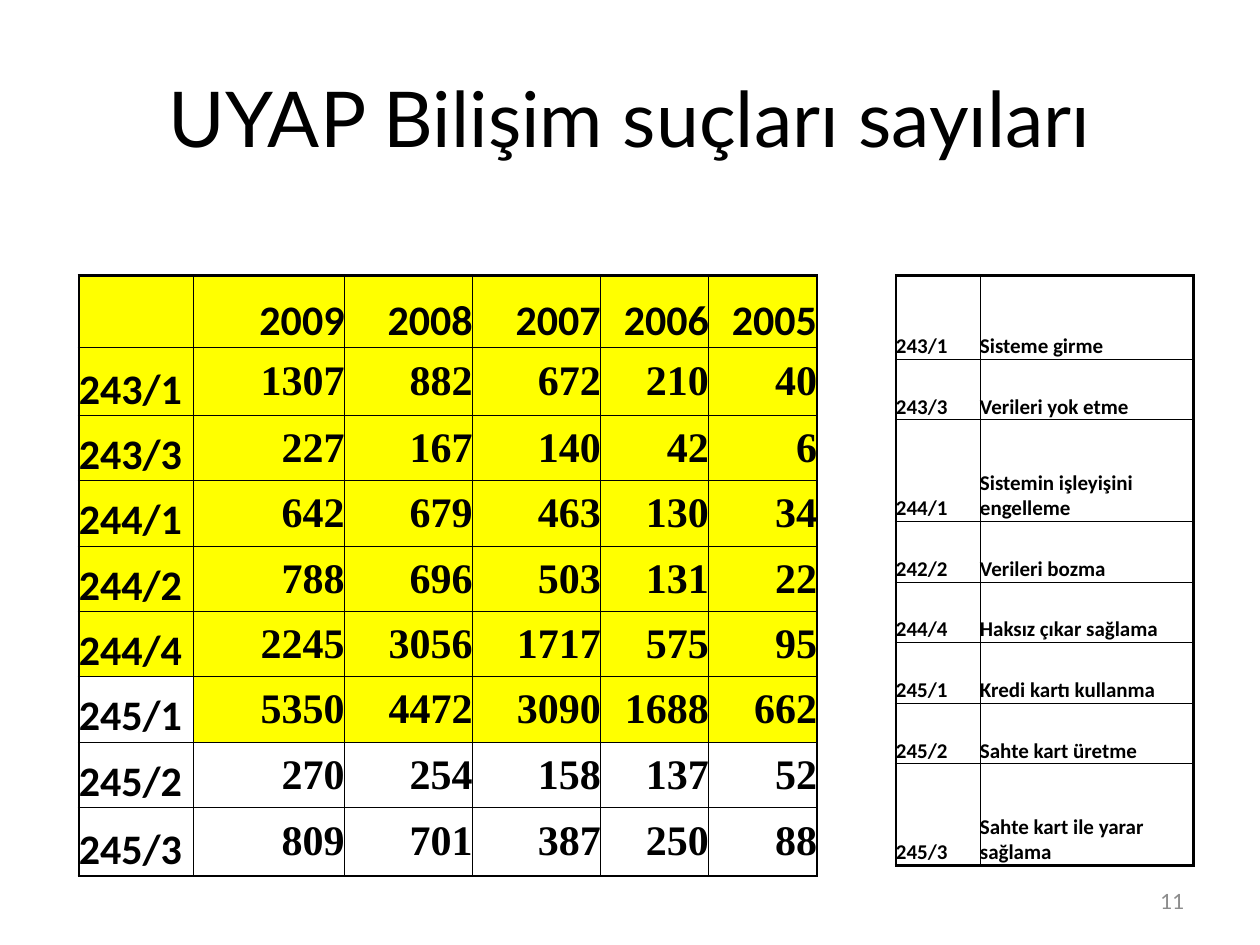
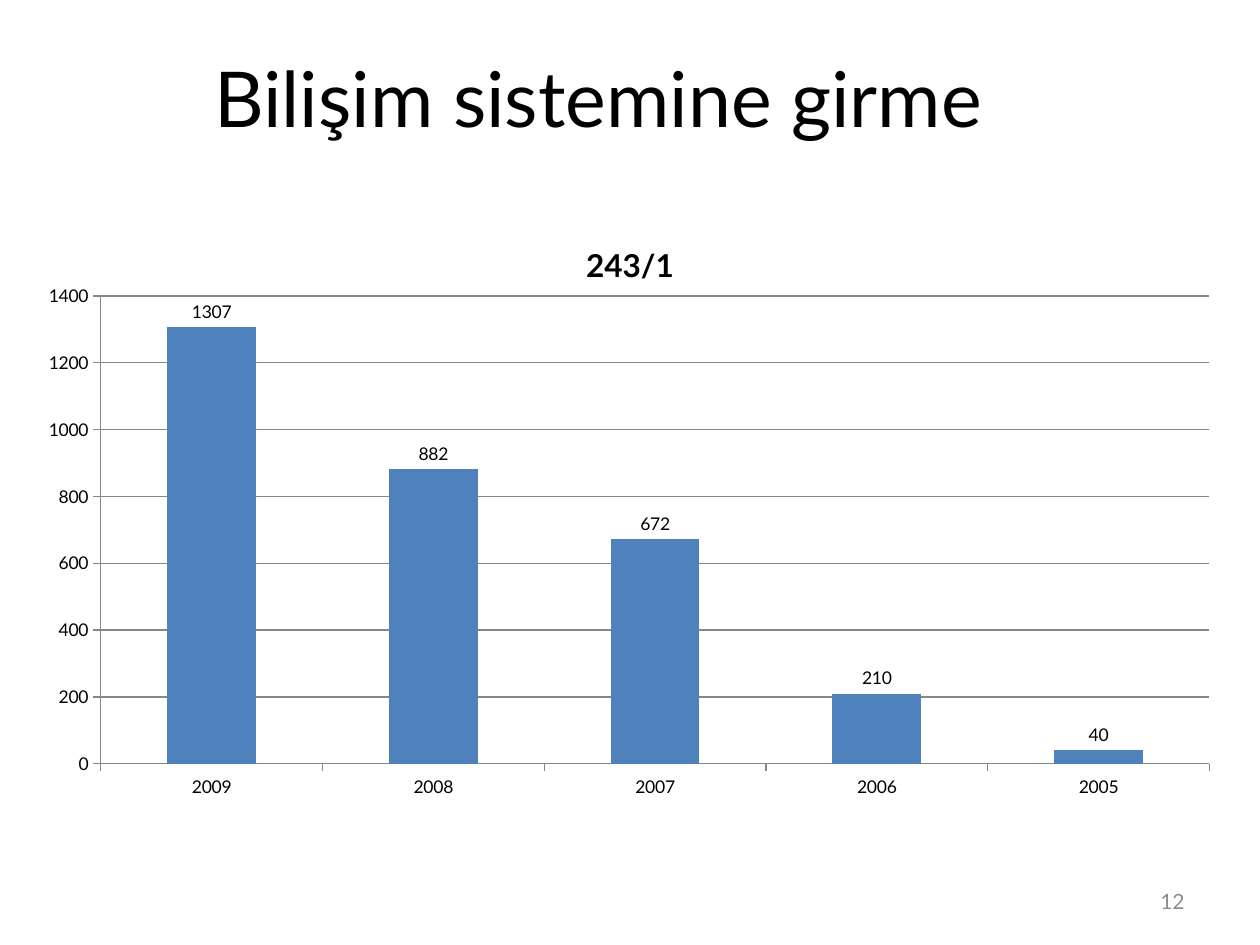
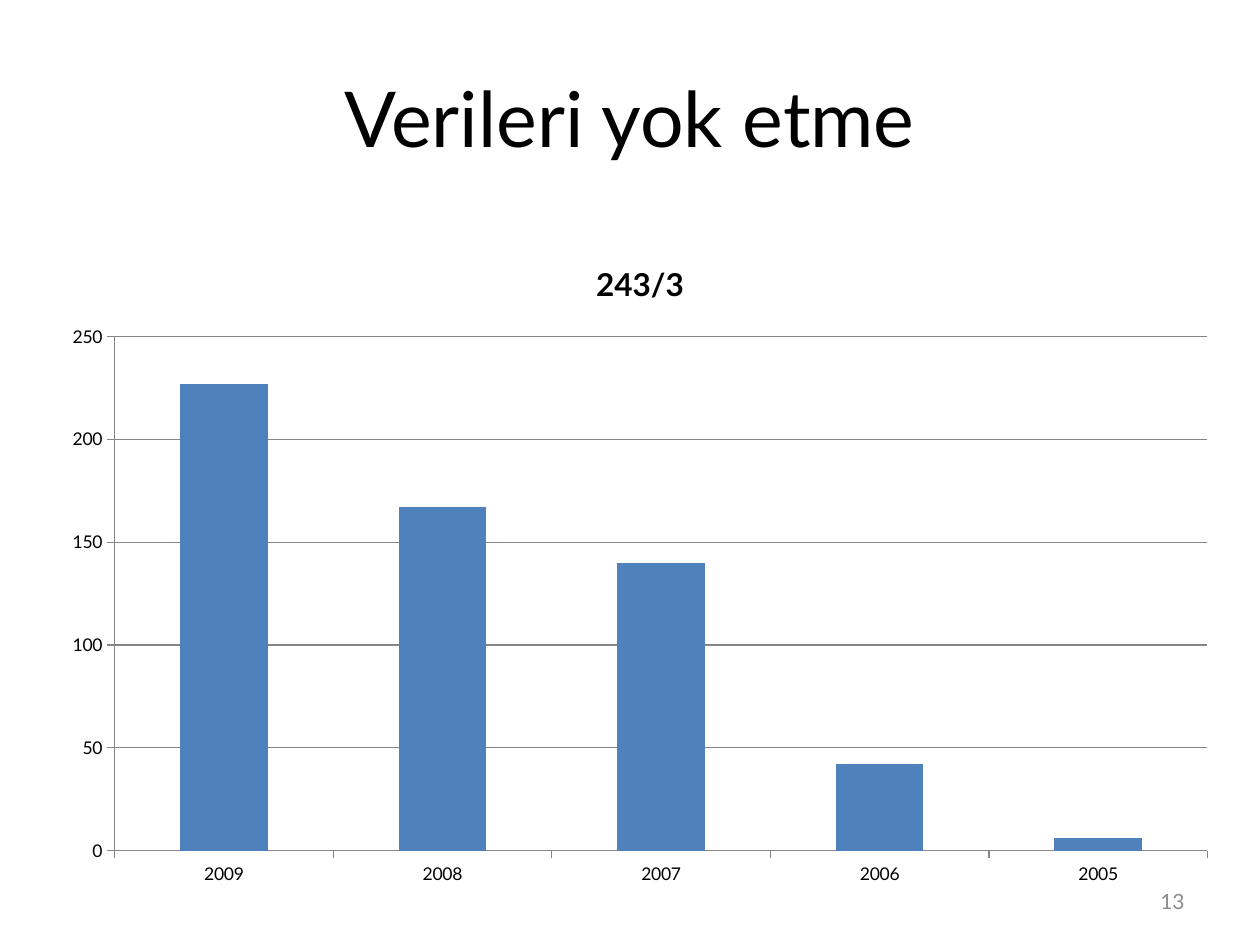
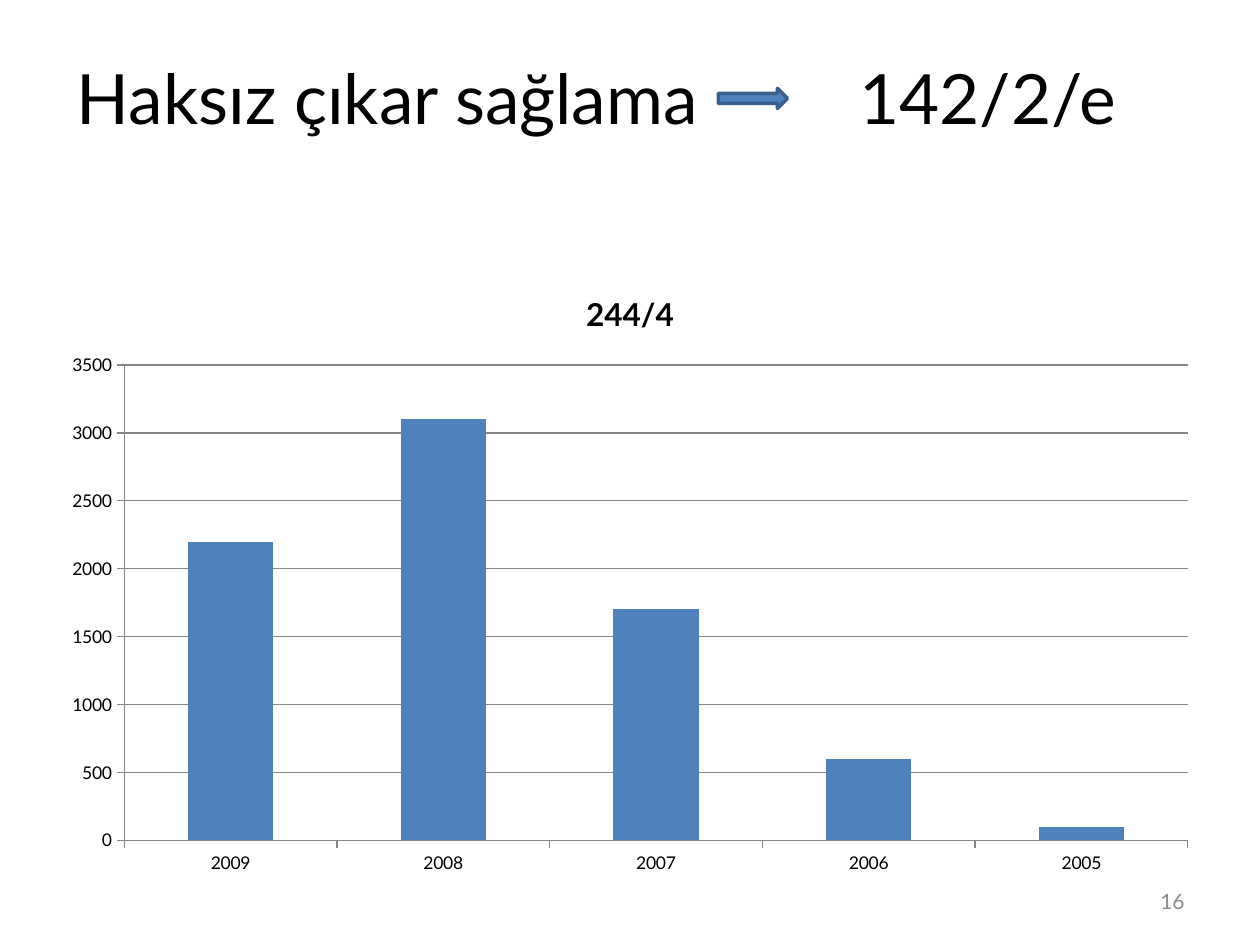
from lxml import etree
from pptx import Presentation
from pptx.chart.data import CategoryChartData
from pptx.dml.color import RGBColor
from pptx.enum.chart import XL_CHART_TYPE, XL_LABEL_POSITION, XL_TICK_MARK
from pptx.enum.shapes import MSO_SHAPE
from pptx.enum.text import MSO_ANCHOR, PP_ALIGN
from pptx.oxml import parse_xml
from pptx.oxml.ns import nsdecls, qn
from pptx.util import Pt

COLUMNS = XL_CHART_TYPE.COLUMN_CLUSTERED
OUTSIDE_END, TICK_OUTSIDE = XL_LABEL_POSITION.OUTSIDE_END, XL_TICK_MARK.OUTSIDE
MIDDLE, BOTTOM = MSO_ANCHOR.MIDDLE, MSO_ANCHOR.BOTTOM
LEFT, CENTER, RIGHT = PP_ALIGN.LEFT, PP_ALIGN.CENTER, PP_ALIGN.RIGHT
RIGHT_ARROW = MSO_SHAPE.RIGHT_ARROW

COLORS = {"text": "000000", "number": "8C8C8C", "highlight": "FFFF00",
          "bar": "4F81BD", "arrow_line": "3A5F8C", "axis": "868686"}
COLORS = {name: RGBColor.from_string(value) for name, value in COLORS.items()}
HEADING, BODY, FIGURES = "Lato", "Calibri", "Times New Roman"
YEARS = ["2009", "2008", "2007", "2006", "2005"]


def write(frame, text, align, color="text", **font_values):
    para = frame.paragraphs[0]
    para.alignment = align
    span = para.add_run()
    span.text = text
    span.font.color.rgb = COLORS[color]
    for name, value in font_values.items():
        setattr(span.font, name, value)


def add_grid(page, left, top, widths, heights):
    frame = page.shapes.add_table(len(heights), len(widths), Pt(left), Pt(top),
                                  Pt(sum(widths)), Pt(sum(heights)))
    table = frame.table
    table.first_row = table.horz_banding = False
    for column, width in zip(table.columns, widths):
        column.width = Pt(width)
    for row, height in zip(table.rows, heights):
        row.height = Pt(height)
    # Thin inner rules, thick outer frame
    for r in range(len(heights)):
        for c in range(len(widths)):
            cell = table.cell(r, c)
            cell.margin_left = cell.margin_right = cell.margin_top = cell.margin_bottom = 0
            cell.vertical_anchor = BOTTOM
            outer = {"L": c == 0, "R": c == len(widths) - 1,
                     "T": r == 0, "B": r == len(heights) - 1}
            properties = cell._tc.get_or_add_tcPr()
            for side, is_outer in outer.items():
                properties.append(parse_xml(
                    f'<a:ln{side} {nsdecls("a")} w="{Pt(1.5 if is_outer else 0.5)}"><a:solidFill>'
                    f'<a:srgbClr val="{COLORS["text"]}"/></a:solidFill></a:ln{side}>'))
            cell.fill.background()
    return table


deck = Presentation()
deck.slide_width, deck.slide_height = Pt(720), Pt(540)

# Titles and page numbers
STANDARD_TITLE = (36, 21.6, 648, 90)
HIGH_TITLE = (0, 0, 684, 111)
headings = [
    ("UYAP Bilişim suçları sayıları", "11", STANDARD_TITLE, 44),
    ("Bilişim sistemine girme", "12", HIGH_TITLE, 44),
    ("Verileri yok etme", "13", STANDARD_TITLE, 44),
    ("Haksız çıkar sağlama\t142/2/e", "16", HIGH_TITLE, 39.6),
]
pages = []
for title, number, place, size in headings:
    page = deck.slides.add_slide(deck.slide_layouts[6])
    pages.append(page)
    box = page.shapes.add_textbox(*map(Pt, place))
    frame = box.text_frame
    frame.word_wrap, frame.vertical_anchor = True, MIDDLE
    align = CENTER
    if "\t" in title:
        # Leave room for the arrow between the two halves of the title
        align = LEFT
        frame.margin_left = Pt(44)
        tabs = etree.SubElement(frame.paragraphs[0]._p.get_or_add_pPr(), qn("a:tabLst"))
        etree.SubElement(tabs, qn("a:tab"), pos=str(Pt(447)), algn="l")
    write(frame, title, align, name=HEADING, size=Pt(size))

    box = page.shapes.add_textbox(Pt(516), Pt(500.5), Pt(168), Pt(28.75))
    box.text_frame.word_wrap, box.text_frame.vertical_anchor = True, MIDDLE
    write(box.text_frame, number, RIGHT, "number", name=HEADING, size=Pt(12))

# Case counts by article and year
counts = [
    ("", *YEARS),
    ("243/1", "1307", "882", "672", "210", "40"),
    ("243/3", "227", "167", "140", "42", "6"),
    ("244/1", "642", "679", "463", "130", "34"),
    ("244/2", "788", "696", "503", "131", "22"),
    ("244/4", "2245", "3056", "1717", "575", "95"),
    ("245/1", "5350", "4472", "3090", "1688", "662"),
    ("245/2", "270", "254", "158", "137", "52"),
    ("245/3", "809", "701", "387", "250", "88"),
]
table = add_grid(pages[0], 45, 157.5, [65.5, 86.4, 73.2, 73.2, 61.8, 61.8],
                 [41, 39] + [37.35] * 6 + [39])
for r, row in enumerate(counts):
    for c, text in enumerate(row):
        cell = table.cell(r, c)
        is_figure = r > 0 and c > 0
        if is_figure:
            cell.vertical_anchor = MIDDLE
        if r < 6 or (r == 6 and c > 0):
            cell.fill.solid()
            cell.fill.fore_color.rgb = COLORS["highlight"]
        if text:
            write(cell.text_frame, text, RIGHT if c else LEFT,
                  name=FIGURES if is_figure else BODY, size=Pt(24), bold=True)

# Meaning of each article
articles = [
    ("243/1", "Sisteme girme"),
    ("243/3", "Verileri yok etme"),
    ("244/1", "Sistemin işleyişini engelleme"),
    ("242/2", "Verileri bozma"),
    ("244/4", "Haksız çıkar sağlama"),
    ("245/1", "Kredi kartı kullanma"),
    ("245/2", "Sahte kart üretme"),
    ("245/3", "Sahte kart ile yarar sağlama"),
]
table = add_grid(pages[0], 512, 157.5, [48, 122],
                 [47.8, 34.6, 58.2] + [34.6] * 4 + [58.2])
for r, row in enumerate(articles):
    for c, text in enumerate(row):
        write(table.cell(r, c).text_frame, text, LEFT, name=BODY, size=Pt(12), bold=True)

# One column chart per article
charts = [
    (pages[1], "243/1", (1307, 882, 672, 210, 40), (0, 124, 720, 376.5)),
    (pages[2], "243/3", (227, 167, 140, 42, 6), (28, 134.8, 675.5, 378)),
    (pages[3], "244/4", (2200, 3100, 1700, 600, 100), (28, 152, 664, 354.4)),
]
for page, article, values, place in charts:
    data = CategoryChartData()
    data.categories = YEARS
    data.add_series(article, values)
    chart = page.shapes.add_chart(COLUMNS, *map(Pt, place), data).chart
    chart.has_legend = False
    chart.font.name, chart.font.size = HEADING, Pt(10)
    chart.font.color.rgb = COLORS["text"]
    chart.has_title = True
    chart.chart_title.include_in_layout = False
    write(chart.chart_title.text_frame, article, CENTER,
          name=HEADING, size=Pt(18), bold=True)
    plot = chart.plots[0]
    plot.gap_width, plot.vary_by_categories = 150, False
    fill = plot.series[0].format.fill
    fill.solid()
    fill.fore_color.rgb = COLORS["bar"]
    chart.value_axis.has_major_gridlines = True
    for axis in (chart.category_axis, chart.value_axis):
        axis.major_tick_mark = TICK_OUTSIDE
    for part in (chart.category_axis, chart.value_axis, chart.value_axis.major_gridlines):
        part.format.line.width = Pt(0.75)
        part.format.line.color.rgb = COLORS["axis"]

    if page is pages[1]:
        # Value labels and a fixed plot area
        plot.has_data_labels = True
        plot.data_labels.show_value = True
        plot.data_labels.position = OUTSIDE_END
        area = chart._chartSpace.chart.plotArea
        for old in area.findall(qn("c:layout")):
            area.remove(old)
        settings = {"layoutTarget": "inner", "xMode": "edge", "yMode": "edge",
                    "x": 0.08, "y": 0.12, "w": 0.88, "h": 0.71}
        marks = "".join(f'<c:{name} val="{value}"/>' for name, value in settings.items())
        area.insert(0, parse_xml(f'<c:layout {nsdecls("c")}><c:manualLayout>{marks}'
                                 '</c:manualLayout></c:layout>'))

# Arrow inside the last title
arrow = pages[3].shapes.add_shape(RIGHT_ARROW, Pt(410.5), Pt(50.5), Pt(39.5), Pt(11.5))
arrow.shadow.inherit = False
arrow.fill.solid()
arrow.fill.fore_color.rgb = COLORS["bar"]
arrow.line.color.rgb = COLORS["arrow_line"]
arrow.line.width = Pt(2)

deck.save("out.pptx")
